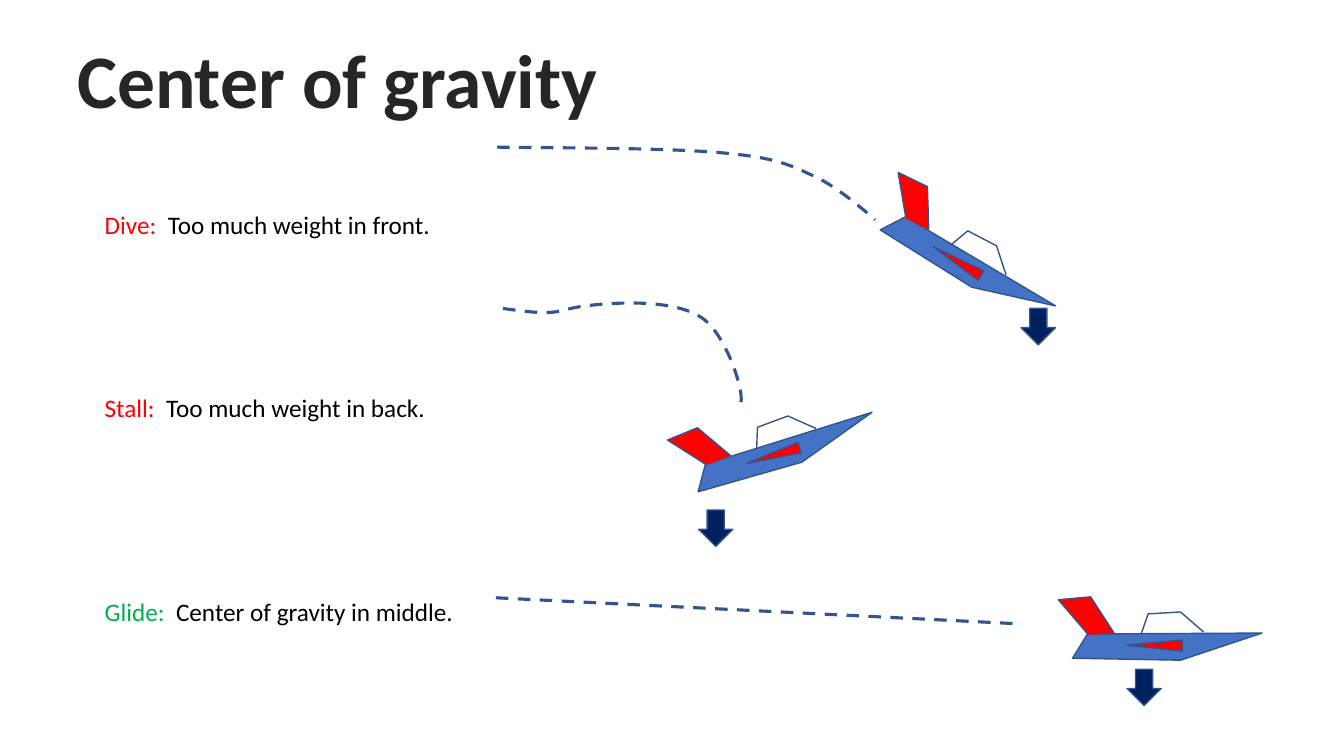
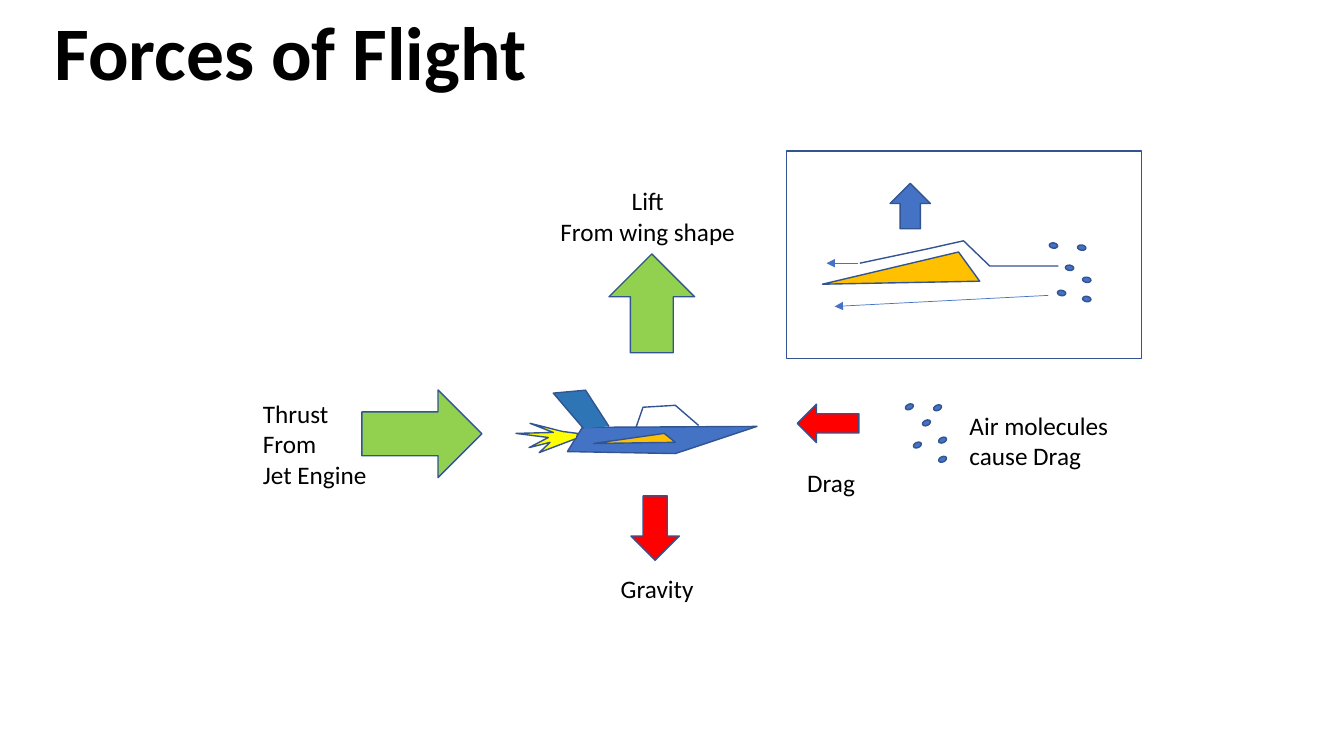
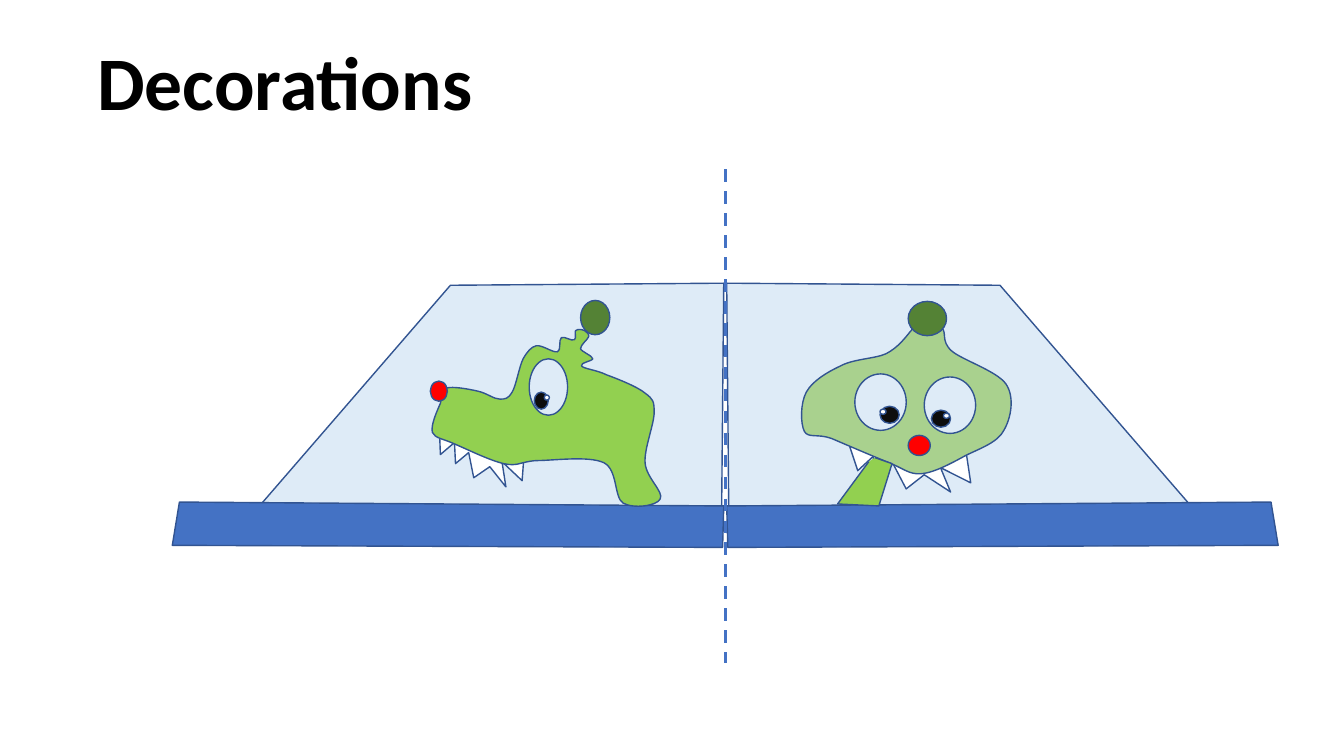
from math import cos, radians, sin

from lxml.etree import SubElement
from pptx import Presentation
from pptx.dml.color import RGBColor as Rgb
from pptx.enum.dml import MSO_LINE as Dash
from pptx.enum.shapes import MSO_CONNECTOR as Conn, MSO_SHAPE as Kind
from pptx.enum.text import MSO_AUTO_SIZE as Fit, PP_ALIGN as Align
from pptx.oxml.ns import qn
from pptx.util import Pt

HUES = {
    "black": "000000", "ink": "262626", "white": "FFFFFF", "edge": "325491",
    "blue": "4472C4", "steel": "2E75B6", "navy": "002060", "pale": "DEEBF7",
    "red": "FF0000", "green": "00B050", "lime": "92D050", "sage": "A9D18E",
    "moss": "548235", "gold": "FFC000", "yellow": "FFFF00", "pupil": "0D0D0D",
}
FONT = "Calibri"

# Plane outlines, measured from the centre of the body
BODY = [(-57, -9), (67.7, -9.7), (9.4, 9.7), (-67.7, 8.3)]
TAIL = [(-38, -9.7), (-54.7, -35.6), (-77.8, -33.5), (-56.2, -8.3)]
WING = [(10.8, -4.7), (10.8, 3.2), (-28.8, -1)]
CANOPY = [(26, -10.4), (9.4, -24.8), (-13.7, -23.4), (-18.7, -9)]

DIVE = [
    (355, 105.1),
    (417.6, 105.8), (480.2, 105.8), (518.4, 109.4),
    (555.8, 113), (564.5, 118), (581.8, 126),
    (599.8, 134), (625, 157), (625, 157),
]
STALL = [
    (359.3, 220.3),
    (403.2, 226.8), (395.3, 221), (420.5, 218.2),
    (445.7, 215.3), (483, 214.6), (501, 226.8),
    (519, 238.3), (533.5, 283.7), (528.5, 289.4),
]
FLAME = [
    (401.8, 308.2), (378.7, 302.4), (395.3, 308.9), (368.6, 309.6),
    (391.7, 312.5), (378, 319.7), (393, 316), (385.2, 323.3),
    (411.8, 313.2), (412.6, 309.6),
]
DRAG_DOTS = [(646.6, 288.7), (666.7, 289.4), (670.3, 312.5),
             (670.3, 326.2), (658.8, 300.2), (652.3, 316)]
LIFT_DOTS = [(749.5, 173.5), (769.7, 175), (773.3, 198),
             (773.3, 211.7), (761, 189.4), (755.3, 207.4)]

PANE = [(515.5, 365.8), (517, 202.3), (321.8, 203.8), (182.9, 364.3)]
BAR = [(517, 361.4), (128.2, 358.6), (123.1, 389.5), (516.2, 391)]
FRONT_TEETH = [
    (607, 319), (612.7, 336.2), (623.5, 326.2), (628.6, 340.6),
    (637.9, 331.2), (647.3, 349.2), (660.2, 339.1), (679, 351.4),
    (671.8, 334), (693.4, 344.9), (690.5, 325.4),
]
SIDE_TEETH = [
    (313.9, 306.7), (314.6, 324.7), (324.7, 316.1), (325.4, 331.2),
    (334.8, 323.3), (338.4, 341.3), (349.9, 333.4), (361.4, 347.8),
    (358.6, 329.8), (373, 343.4), (374.4, 324),
]
FRONT_HEAD = [
    (650.2, 236.9),
    (647.3, 240.5), (641.5, 248.4), (632.9, 252.7),
    (625, 256.3), (609.8, 256.3), (600.5, 261.4),
    (591.1, 265.7), (580.3, 272.2), (576, 280.1),
    (571.7, 288), (571.7, 302.4), (574.6, 308.2),
    (577.4, 313.2), (583.9, 309.6), (594, 313.2),
    (604.1, 317.5), (624.2, 326.2), (635, 330.5),
    (645.8, 334.8), (649.4, 339.1), (658.1, 338.4),
    (667.4, 337.7), (680.4, 330.5), (689.8, 325.4),
    (699.8, 320.4), (712.8, 316.1), (717.1, 307.4),
    (722.2, 298.8), (725, 283.7), (718.6, 274.3),
    (712.1, 265), (686.9, 257), (679.7, 250.6),
    (671.8, 243.4), (676.8, 237.6), (672.5, 234),
    (667.4, 231.1), (655.2, 231.1), (651.6, 231.8),
    (648, 232.6), (653.8, 234), (650.2, 236.9),
]
SIDE_HEAD = [
    (417.6, 236.2),
    (416.2, 235.4), (412.6, 234.7), (411.1, 236.2),
    (410.4, 236.9), (411.8, 241.9), (410.4, 242.6),
    (408.2, 244.1), (403.2, 239.8), (401, 241.2),
    (398.9, 242.6), (401, 250.6), (398.2, 251.3),
    (394.6, 252), (387.4, 246.2), (383, 247),
    (379.4, 247.7), (376.6, 251.3), (373.7, 256.3),
    (370.8, 262.1), (368.6, 275.8), (365.8, 280.1),
    (362.9, 285.1), (360.7, 285.1), (357.1, 285.1),
    (352.8, 285.1), (347.8, 280.8), (341.3, 279.4),
    (334.8, 277.9), (323.3, 275.8), (319, 277.2),
    (314.6, 278.6), (316.1, 283), (314.6, 288),
    (312.5, 293), (307.4, 303.8), (308.9, 308.9),
    (311, 313.2), (316.1, 313.2), (324, 316.8),
    (332.6, 320.4), (349.9, 329), (360, 331.2),
    (370.1, 333.4), (371.5, 329.8), (383, 329),
    (395.3, 329), (420.5, 325.4), (431.3, 330.5),
    (441.4, 335.5), (438.5, 355), (445, 359.3),
    (452.2, 363.6), (469.4, 361.4), (471.6, 356.4),
    (474.5, 351.4), (461.5, 341.3), (460.8, 330.5),
    (460.1, 320.4), (467.3, 303.1), (467.3, 294.5),
    (467.3, 286.6), (466.6, 285.1), (460.8, 280.8),
    (455.8, 276.5), (441.4, 270.7), (433.4, 267.8),
    (426.2, 264.2), (416.9, 263.5), (415.4, 261.4),
    (414, 259.2), (423.4, 257.8), (423.4, 256.3),
    (423.4, 254.2), (415.4, 251.3), (414.7, 249.1),
    (414.7, 246.2), (419.8, 242.6), (420.5, 240.5),
    (421.2, 239), (419, 236.9), (417.6, 236.2),
]
NECK = [(620.6, 329.8), (598.3, 360), (627.8, 361.4), (637.2, 331.2),
        (625, 326.9)]


def hue(name):
    return Rgb.from_string(HUES[name])


def mirror(pts):
    """Reflect points across the fold of the sheet."""
    return [(1036.1 - x, y) for x, y in pts]


class Deck:
    def __init__(self):
        self.prs = Presentation()
        self.prs.slide_width, self.prs.slide_height = Pt(960), Pt(540)
        self.items = None

    def page(self, title, box, color="black", rim=0.75):
        """Start a slide with its outlined title."""
        layout = self.prs.slide_layouts[6]
        self.items = self.prs.slides.add_slide(layout).shapes
        frame = self.text(box, [[(title, color)]], size=54, mid=True)
        run = frame.paragraphs[0].runs[0]
        run.font.bold = True
        line = SubElement(run.font._element, qn("a:ln"), w=str(Pt(rim)))
        fill = SubElement(line, qn("a:solidFill"))
        SubElement(fill, qn("a:srgbClr"), val=HUES["white"])
        run.font._element.insert(0, line)

    def text(self, box, rows, size=18, mid=False, wrap=False):
        """Add paragraphs, each a list of (text, colour) runs."""
        frame = self.items.add_textbox(*map(Pt, box)).text_frame
        frame.word_wrap = wrap
        frame.auto_size = Fit.SHAPE_TO_FIT_TEXT
        for num, row in enumerate(rows):
            para = frame.add_paragraph() if num else frame.paragraphs[0]
            para.alignment = Align.CENTER if mid else Align.LEFT
            for words, color in row:
                run = para.add_run()
                run.text = words
                run.font.name, run.font.size = FONT, Pt(size)
                run.font.color.rgb = hue(color)
        return frame

    def label(self, box, *rows, **style):
        self.text(box, [[(row, "black")] for row in rows], **style)

    def paint(self, shape, fill):
        shape.shadow.inherit = False
        if fill:
            shape.fill.solid()
            shape.fill.fore_color.rgb = hue(fill)
        else:
            shape.fill.background()
        shape.line.color.rgb = hue("edge")
        shape.line.width = Pt(1)
        return shape

    def shape(self, kind, box, fill, turn=0):
        item = self.items.add_shape(kind, *map(Pt, box))
        item.rotation = turn
        return self.paint(item, fill)

    def oval(self, box, fill, turn=0):
        self.shape(Kind.OVAL, box, fill, turn)

    def outline(self, pts, fill=None, close=True):
        ends = [(Pt(x), Pt(y)) for x, y in pts]
        pen = self.items.build_freeform(*ends[0], scale=1.0)
        pen.add_line_segments(ends[1:], close=close)
        return self.paint(pen.convert_to_shape(), fill)

    def curve(self, pts, fill=None, close=True):
        """Draw cubic curves: a start, then three points for each curve."""
        item = self.outline(pts, fill, close)
        legs = list(item._element.iter(qn("a:lnTo")))
        for num in range(0, len(legs), 3):
            trio = legs[num:num + 3]
            bend = trio[0].makeelement(qn("a:cubicBezTo"))
            trio[0].addprevious(bend)
            for leg in trio:
                bend.append(leg[0])
                leg.getparent().remove(leg)
        return item

    def trail(self, pts):
        item = self.curve(pts, close=False)
        item.line.width = Pt(2.25)
        item.line.dash_style = Dash.DASH

    def line(self, start, end, color="blue", width=2.25, dash=True, tip=False):
        item = self.items.add_connector(
            Conn.STRAIGHT, *map(Pt, (*start, *end)))
        item.line.color.rgb = hue(color)
        item.line.width = Pt(width)
        if dash:
            item.line.dash_style = Dash.DASH
        if tip:
            SubElement(item.line._get_or_add_ln(), qn("a:tailEnd"),
                       type="triangle")
        SubElement(item._element.spPr, qn("a:effectLst"))

    def plane(self, mid, turn=0, tail="red", wing=True):
        """Draw the plane's parts and turn them about the body centre."""
        parts = [(BODY, "blue", True), (TAIL, tail, False)]
        if wing:
            parts.append((WING, "red", True))
        parts.append((CANOPY, None, False))
        cx, cy = map(Pt, mid)
        co, si = cos(radians(turn)), sin(radians(turn))
        for pts, fill, close in parts:
            spots = [(mid[0] + x, mid[1] + y) for x, y in pts]
            part = self.outline(spots, fill, close)
            dx = part.left + part.width / 2 - cx
            dy = part.top + part.height / 2 - cy
            part.left = round(cx + dx * co - dy * si - part.width / 2)
            part.top = round(cy + dx * si + dy * co - part.height / 2)
            part.rotation = turn

    def dots(self, spots, turn):
        for x, y in spots:
            self.oval((x, y, 6, 3.8), "blue", turn)

    def eye(self, white, pupil, glint):
        for box, fill in ((white, "pale"), (pupil, "pupil"), (glint, "white")):
            self.oval(box, fill)


def balance(deck):
    deck.page("Center of gravity", (46, 20, 390, 73), "ink", 1.06)
    cases = [
        ("Dive:  ", "red", "Too much weight in front.", (146, 250),
         (691, 192), 31, (729.4, 220.3)),
        ("Stall:  ", "red", "Too much weight in back.", (277, 246),
         (561, 323.6), -17, (499, 364.3)),
        ("Glide:  ", "green", "Center of gravity in middle.", (422.6, 266),
         (833.8, 461.9), 0, (805, 478)),
    ]
    for word, color, cause, (top, wide), mid, turn, spot in cases:
        deck.plane(mid, turn)
        deck.shape(Kind.DOWN_ARROW, (*spot, 24.5, 26), "navy")
        deck.text((67.7, top, wide, 29), [[(word, color), (cause, "black")]])
    deck.trail(DIVE)
    deck.trail(STALL)
    deck.line((354.2, 427), (730, 445.7), "edge")


def forces(deck):
    deck.page("Forces of Flight", (29.5, 0, 356, 73))
    deck.shape(Kind.RECTANGLE, (562, 108, 253.5, 148.3), "white")
    deck.plane((473, 314.3), tail="steel", wing=False)
    for kind, box, fill in (
        (Kind.DOWN_ARROW, (450.7, 354.2, 34.6, 46), "red"),
        (Kind.LEFT_ARROW, (569.5, 288.7, 44, 27.4), "red"),
        (Kind.RIGHT_ARROW, (258.5, 278.6, 85.7, 62.6), "lime"),
        (Kind.UP_ARROW, (435, 181.4, 61.2, 70.6), "lime"),
        (Kind.UP_ARROW, (635.8, 131, 28.8, 32.4), "blue"),
    ):
        deck.shape(kind, box, fill)
    deck.label((436.3, 406, 67, 29), "Gravity")
    deck.label((392.4, 129, 140.4, 51), "Lift", "From wing shape", mid=True)
    deck.label((569.5, 330.5, 49, 29), "Drag")
    deck.label((180.7, 281, 89, 73), "Thrust", "From", "Jet Engine")
    deck.label((685.4, 289.4, 135.4, 51), "Air molecules", "cause Drag",
               wrap=True)
    deck.dots(DRAG_DOTS, -24.1)
    deck.outline(FLAME, "yellow")
    deck.outline([(424, 316.8), (482.4, 316), (474.5, 309.6)], "gold")
    deck.outline([(587.5, 203), (699.8, 200.9), (684.7, 180)], "gold")
    for start, end in (((748.8, 211), (596.2, 218.9)),
                       ((612.7, 188), (590.4, 188))):
        deck.line(start, end, width=0.5, dash=False, tip=True)
    deck.dots(LIFT_DOTS, 7.8)
    deck.outline([(756, 190), (707, 190), (688.3, 172), (662.4, 177.8),
                  (614.2, 188)], close=False)


def decor(deck):
    deck.page("Decorations", (61, 21.6, 285, 73))
    for pts in (PANE, mirror(PANE)):
        deck.outline(pts, "pale")
    deck.outline(FRONT_TEETH, "white")
    deck.curve(FRONT_HEAD, "sage")
    deck.eye((610.6, 267.1, 36.7, 40.3), (628.6, 290.2, 13.7, 12.2),
             (628.6, 292.3, 4.3, 3.6))
    deck.eye((660.2, 269.3, 36.7, 40.3), (665.3, 293, 13.7, 12.2),
             (673.9, 295.2, 4.3, 3.6))
    deck.oval((648.7, 215.3, 27.4, 24.5), "moss")
    deck.oval((648.7, 311, 15.8, 14.4), "red")
    for pts in (mirror(BAR), BAR):
        deck.outline(pts, "blue")
    deck.line((518.4, 121), (518.4, 473.8))
    deck.outline(SIDE_TEETH, "white")
    deck.curve(SIDE_HEAD, "lime")
    deck.eye((378, 256.3, 27.4, 40.3), (381.6, 280.1, 10, 12.2),
             (388.8, 282.2, 3.6, 3.6))
    deck.oval((414.7, 214.6, 20.9, 24.5), "moss")
    deck.oval((307.4, 272.2, 12.2, 14.4), "red")
    deck.outline(NECK, "lime", close=False)


def main():
    deck = Deck()
    balance(deck)
    forces(deck)
    decor(deck)
    deck.prs.save("out.pptx")


if __name__ == "__main__":
    main()
